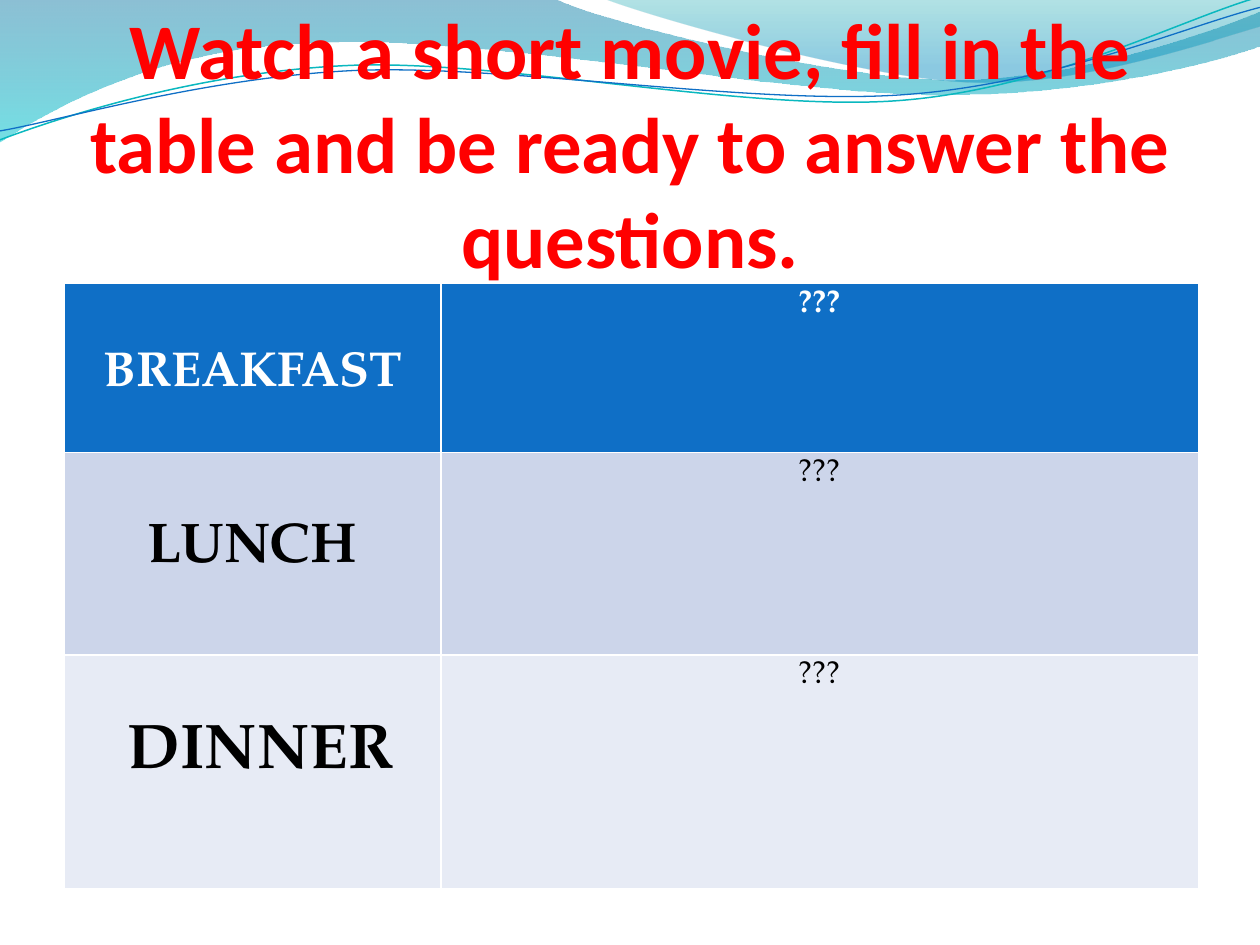
from dataclasses import dataclass

import pptx
import pptx.dml.color
import pptx.enum.text
import pptx.oxml
import pptx.oxml.ns
import pptx.util
from pptx.util import Cm, Pt

SERIF = "TeX Gyre Pagella"
WHITE, BLACK, RED, BLUE = "FFFFFF", "000000", "FF0000", "0F6FC6"
CENTER = pptx.enum.text.PP_ALIGN.CENTER


@dataclass
class Stop:
    position: float
    color: str
    opacity: int


@dataclass
class Wave:
    """Points in cm; a step of two numbers is a line, of six a Bezier curve."""
    start: tuple
    steps: list
    stops: tuple = ()
    line_color: str = ""
    line_width: float = 0


@dataclass
class Meal:
    name: str
    name_size: int
    name_offset: float
    height: float
    fill: str
    color: str
    answer_bold: bool = False


WAVES = [
    Wave((0, 0), [
        (11.18, -0.03),
        (12.09, 0.43, 16.87, 1.6, 19.25, 1.6),
        (21.67, 1.6, 24.33, 0.66, 25.4, 0.23),
        (25.43, 0.91),
        (24.97, 1.12, 22.1, 1.93, 18.95, 1.91),
        (15.8, 1.91, 9.7, 0.71, 6.53, 0.86),
        (3.28, 0.91, 1.17, 2.11, -0.03, 2.87),
        (0, 0),
    ], stops=(Stop(0, "0074A1", 45), Stop(1, "00C6CF", 55))),
    Wave((12.17, -0.03), [
        (12.93, 0.28, 17.32, 1.57, 19.53, 1.65),
        (21.74, 1.75, 24.41, 0.81, 25.4, 0.53),
        (25.4, 0),
        (12.17, -0.03),
    ], stops=(Stop(0, "00A1A9", 30), Stop(0.8, "008BBF", 45))),
    Wave((0, 2.82), [
        (1.22, 2.36, 4.01, 1.45, 7.04, 1.32),
        (10.03, 1.19, 15.06, 2.26, 18.11, 2.03),
        (21.16, 1.8, 23.83, 0.38, 25.35, -0.05),
    ], line_color="0AB8BF", line_width=0.85),
    Wave((0, 2.64), [
        (1.19, 2.44, 4.17, 1.55, 7.19, 1.42),
        (10.24, 1.3, 15.16, 2.13, 18.21, 1.91),
        (21.23, 1.7, 23.9, 0.53, 25.4, 0.15),
    ], line_color=BLUE, line_width=0.75),
]

MEALS = [
    Meal("BREAKFAST", 28, 1.37, 3.4, BLUE, WHITE, answer_bold=True),
    Meal("LUNCH", 32, 1.41, 4.08, "CCD5EA", BLACK),
    Meal(" DINNER", 36, 1.38, 4.71, "E7EBF5", BLACK),
]


def rgb(color: str):
    return pptx.dml.color.RGBColor.from_string(color)


def bend(shape, steps: list) -> None:
    """Turn the straight segments of the curved steps into Bezier curves."""
    segments = list(shape.element.iter(pptx.oxml.ns.qn("a:lnTo")))
    for segment, step in zip(segments, steps):
        if len(step) == 2:
            continue
        points = "".join(
            f'<a:pt x="{Cm(x) - shape.left}" y="{Cm(y) - shape.top}"/>'
            for x, y in zip(step[::2], step[1::2]))
        curve = pptx.oxml.parse_xml(
            f'<a:cubicBezTo {pptx.oxml.ns.nsdecls("a")}>{points}</a:cubicBezTo>')
        segment.getparent().replace(segment, curve)


def fill_gradient(shape, stops: tuple) -> None:
    """Fill from top to bottom with partly transparent colours."""
    shape.fill.gradient()
    shape.fill.gradient_angle = 270
    for target, stop in zip(shape.fill.gradient_stops, stops):
        target.position = stop.position
        target.color.rgb = rgb(stop.color)
    colors = shape.element.spPr.iter(pptx.oxml.ns.qn("a:srgbClr"))
    for color, stop in zip(list(colors), stops):
        color.append(pptx.oxml.parse_xml(
            f'<a:alpha {pptx.oxml.ns.nsdecls("a")} val="{stop.opacity * 1000}"/>'))


def draw_wave(slide, wave: Wave) -> None:
    ends = [(Cm(step[-2]), Cm(step[-1])) for step in wave.steps]
    builder = slide.shapes.build_freeform(Cm(wave.start[0]), Cm(wave.start[1]))
    builder.add_line_segments(ends, close=bool(wave.stops))
    shape = builder.convert_to_shape()
    bend(shape, wave.steps)
    shape.shadow.inherit = False
    if wave.stops:
        fill_gradient(shape, wave.stops)
        shape.line.fill.background()
    else:
        shape.fill.background()
        shape.line.color.rgb = rgb(wave.line_color)
        shape.line.width = Pt(wave.line_width)


def write(frame, text: str, font: str, size: float, color: str, bold: bool) -> None:
    frame.text = text
    paragraph = frame.paragraphs[0]
    paragraph.alignment = CENTER
    paragraph.font.name = font
    paragraph.font.size = Pt(size)
    paragraph.font.color.rgb = rgb(color)
    # A table style overrides bold unless the run states it.
    paragraph.runs[0].font.bold = bold


def draw_meals(slide, meals: list) -> None:
    """Draw the table; its default style gives the white borders."""
    height = sum(meal.height for meal in meals)
    table = slide.shapes.add_table(
        len(meals), 2, Cm(1.3), Cm(5.72), Cm(22.86), Cm(height)).table
    for column, width in zip(table.columns, (7.59, 15.27)):
        column.width = Cm(width)
    for row, meal in zip(table.rows, meals):
        row.height = Cm(meal.height)
        name, answer = row.cells
        name.margin_top = Cm(meal.name_offset)
        write(name.text_frame, meal.name, SERIF, meal.name_size, meal.color, True)
        write(answer.text_frame, "???", SERIF, 18, meal.color, meal.answer_bold)
        for cell in (name, answer):
            cell.fill.solid()
            cell.fill.fore_color.rgb = rgb(meal.fill)


def place_title(slide, text: str) -> None:
    title = slide.shapes.title
    title.left, title.top, title.width, title.height = Cm(1.27), Cm(1.97), Cm(22.86), Cm(3.76)
    frame = title.text_frame
    write(frame, text, "Calibri", 45, RED, True)
    frame.word_wrap = True
    frame.auto_size = pptx.enum.text.MSO_AUTO_SIZE.NONE
    frame.vertical_anchor = pptx.enum.text.MSO_ANCHOR.BOTTOM
    frame.margin_left = frame.margin_right = frame.margin_bottom = 0
    frame.margin_top = Cm(0.13)
    # The title lies over the waves.
    title.element.getparent().append(title.element)


def main() -> None:
    deck = pptx.Presentation()
    deck.slide_width, deck.slide_height = Cm(25.4), Cm(19.05)
    slide = deck.slides.add_slide(deck.slide_layouts.get_by_name("Title Only"))
    for wave in WAVES:
        draw_wave(slide, wave)
    place_title(slide, "Watch a short movie, fill in the table and be ready to answer the questions.")
    draw_meals(slide, MEALS)
    deck.save("out.pptx")


if __name__ == "__main__":
    main()
